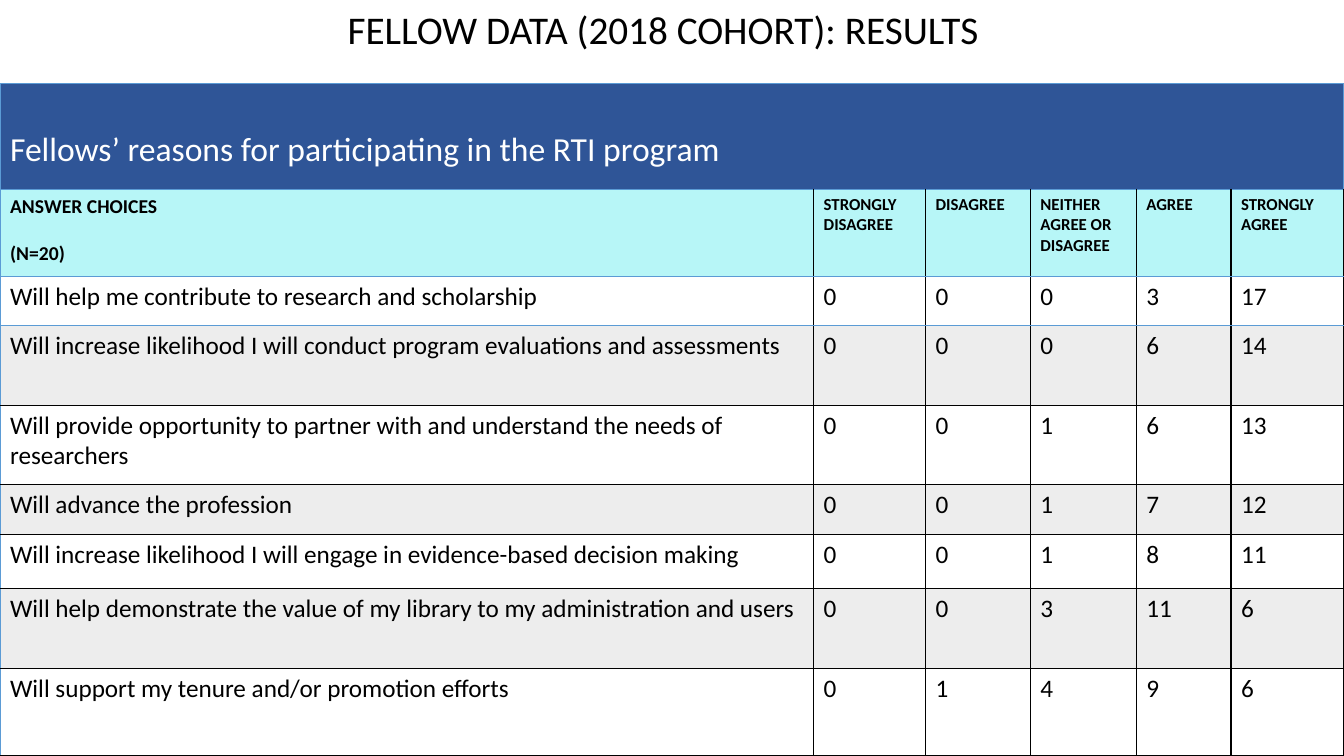
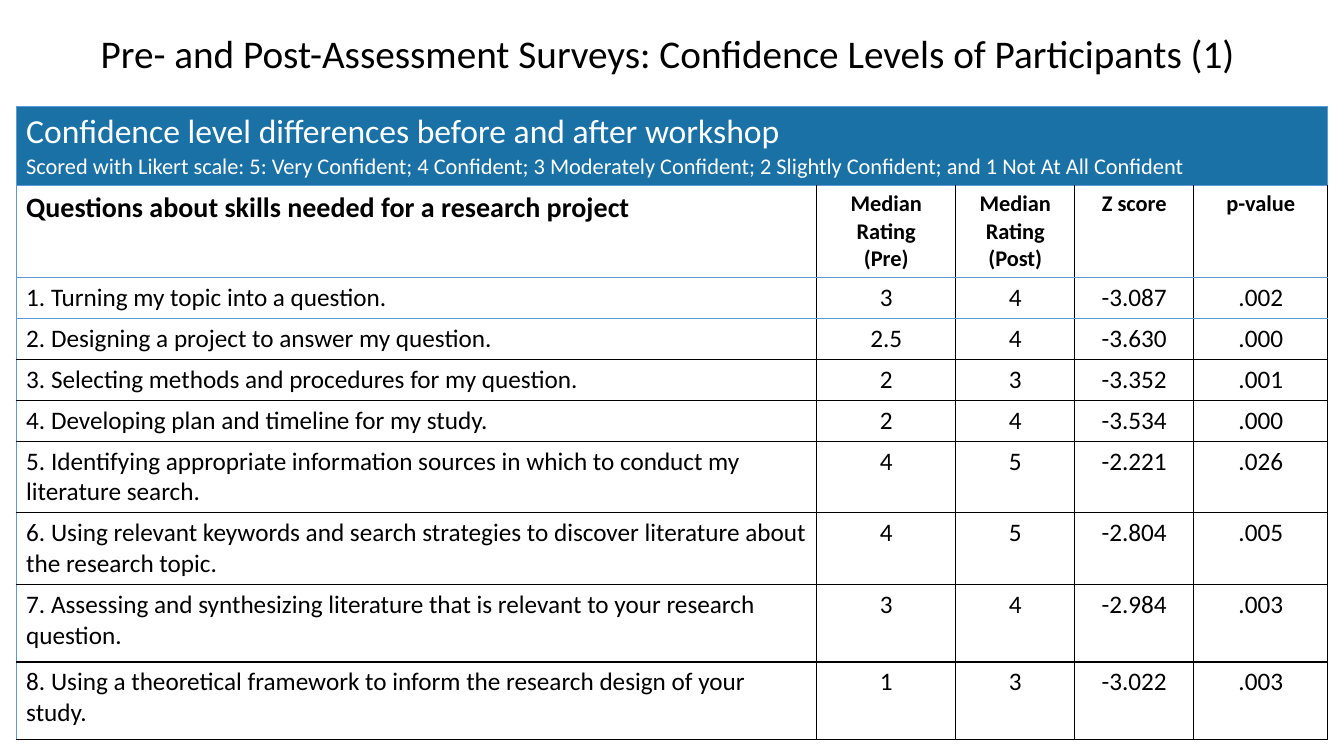
from pptx import Presentation
from pptx.dml.color import RGBColor
from pptx.enum.text import MSO_ANCHOR, MSO_AUTO_SIZE, PP_ALIGN
from pptx.oxml.ns import qn
from pptx.util import Inches, Pt
from lxml import etree

LEFT, CENTER = PP_ALIGN.LEFT, PP_ALIGN.CENTER
TOP, FIXED = MSO_ANCHOR.TOP, MSO_AUTO_SIZE.NONE

THEME = {
    "font": "Calibri",
    "ink": "000000",
    "light": "FFFFFF",
    "edge": "5B9BD5",
    "stripe": "EDEDED",
    "title": 28,
    "body": 18,
    "line": 1,
}
WIDE, HIGH = 13.33, 7.5

# Content: each slide has a title, a band, column heads and rows
SLIDES = [
    {
        "title": "FELLOW DATA (2018 COHORT): RESULTS",
        "box": (-0.19, 0, 13.53, 1.04),
        "at": (0, 0.83, 13.33, 6.67),
        "cols": [8.07, 1.11, 1.04, 1.05, 0.94, 1.12],
        "tall": [1.05, 0.86, 0.49, 0.79, 0.79, 0.49, 0.54, 0.79, 0.87],
        "band": "Fellows’ reasons for participating in the RTI program",
        "band_fill": "2F5597", "band_size": [24], "band_pad": 0.46,
        "heads": ["ANSWER CHOICES\n(N=20)", "STRONGLY DISAGREE", "DISAGREE",
                  "NEITHER AGREE OR DISAGREE", "AGREE", "STRONGLY AGREE"],
        "head_fill": "B7F6F7", "head_size": (14, 12), "head_gap": 17,
        "striped": True, "align": LEFT,
        "rows": [
            ("Will help me contribute to research and scholarship",
             0, 0, 0, 3, 17),
            ("Will increase likelihood I will conduct program evaluations "
             "and assessments", 0, 0, 0, 6, 14),
            ("Will provide opportunity to partner with and understand the "
             "needs of researchers", 0, 0, 1, 6, 13),
            ("Will advance the profession", 0, 0, 1, 7, 12),
            ("Will increase likelihood I will engage in evidence-based "
             "decision making", 0, 0, 1, 8, 11),
            ("Will help demonstrate the value of my library to my "
             "administration and users", 0, 0, 3, 11, 6),
            ("Will support my tenure and/or promotion efforts",
             0, 1, 4, 9, 6),
        ],
    },
    {
        "title": "Pre- and Post-Assessment Surveys: "
                 "Confidence Levels of Participants (1)",
        "box": (0.27, 0.24, 12.7, 0.57),
        "at": (0.16, 1.06, 13.02, 6.21),
        "cols": [7.94, 1.38, 1.18, 1.18, 1.33],
        "tall": [0.74, 0.86] + [0.38] * 4 + [0.67] * 2 + [0.77] * 2,
        "band": "Confidence level differences before and after workshop\n"
                "Scored with Likert scale: 5: Very Confident; 4 Confident; "
                "3 Moderately Confident; 2 Slightly Confident; "
                "and 1 Not At All Confident",
        "band_fill": "1A71A6", "band_size": [24, 16], "band_pad": 0.05,
        "heads": ["Questions about skills needed for a research project",
                  "Median Rating\n(Pre)", "Median Rating\n(Post)",
                  "Z score", "p-value"],
        "head_fill": None, "head_size": (20, 16), "head_gap": 0,
        "striped": False, "align": CENTER,
        "rows": [
            ("1. Turning my topic into a question.",
             "3", "4", "-3.087", ".002"),
            ("2. Designing a project to answer my question.",
             "2.5", "4", "-3.630", ".000"),
            ("3. Selecting methods and procedures for my question.",
             "2", "3", "-3.352", ".001"),
            ("4. Developing plan and timeline for my study.",
             "2", "4", "-3.534", ".000"),
            ("5. Identifying appropriate information sources in which to "
             "conduct my literature search.", "4", "5", "-2.221", ".026"),
            ("6. Using relevant keywords and search strategies to discover "
             "literature about the research topic.",
             "4", "5", "-2.804", ".005"),
            ("7. Assessing and synthesizing literature that is relevant to "
             "your research question.", "3", "4", "-2.984", ".003"),
            ("8. Using a theoretical framework to inform the research "
             "design of your study.", "1", "3", "-3.022", ".003"),
        ],
    },
]


def put(item, **form):
    for name, value in form.items():
        setattr(item, name, value)


def write(frame, text, sizes, color, bold=False, align=LEFT, gap=0):
    """Fill a text frame, one paragraph per line; the last size repeats."""
    for i, line in enumerate(text.split("\n")):
        para = frame.add_paragraph() if i else frame.paragraphs[0]
        put(para, alignment=align, space_before=Pt(gap if i else 0))
        run = para.add_run()
        run.text = line
        put(run.font, name=THEME["font"], bold=bold,
            size=Pt(sizes[min(i, len(sizes) - 1)]))
        run.font.color.rgb = RGBColor.from_string(color)


def rule(cell, r, c):
    """Blue lines round the upper rows and down the left; black elsewhere."""
    blue = {"L": c == 0 or r == 0, "R": r == 0, "T": r <= 3, "B": r <= 2}
    props = cell._tc.get_or_add_tcPr()
    for side, on in blue.items():
        line = etree.SubElement(props, qn("a:ln" + side),
                                w=str(Pt(THEME["line"])))
        fill = etree.SubElement(line, qn("a:solidFill"))
        etree.SubElement(fill, qn("a:srgbClr"),
                         val=THEME["edge" if on else "ink"])


def paint(cell, color):
    if color:
        cell.fill.solid()
        cell.fill.fore_color.rgb = RGBColor.from_string(color)
    else:
        cell.fill.background()


def add_title(slide, data):
    title = slide.shapes.title
    spots = map(Inches, data["box"])
    put(title, **dict(zip(("left", "top", "width", "height"), spots)))
    put(title.text_frame, word_wrap=True, auto_size=FIXED,
        vertical_anchor=TOP)
    write(title.text_frame, data["title"], [THEME["title"]], THEME["ink"],
          align=CENTER)


def add_grid(slide, data):
    cols, tall = data["cols"], data["tall"]
    table = slide.shapes.add_table(len(tall), len(cols),
                                   *map(Inches, data["at"])).table
    put(table, first_row=False, horz_banding=False)
    for col, width in zip(table.columns, cols):
        col.width = Inches(width)
    for row, height in zip(table.rows, tall):
        row.height = Inches(height)

    # Band across the top
    band = table.cell(0, 0)
    for c in range(len(cols)):
        rule(table.cell(0, c), 0, c)
        paint(table.cell(0, c), data["band_fill"])
    band.merge(table.cell(0, len(cols) - 1))
    band.margin_top = Inches(data["band_pad"])
    write(band.text_frame, data["band"], data["band_size"], THEME["light"])

    # Column heads, then the answers
    for r, row in enumerate([data["heads"]] + data["rows"], 1):
        head = r == 1
        shade = THEME["stripe"] if data["striped"] and r % 2 else None
        for c, value in enumerate(row):
            cell = table.cell(r, c)
            rule(cell, r, c)
            paint(cell, data["head_fill"] if head else shade)
            size = data["head_size"][min(c, 1)] if head else THEME["body"]
            write(cell.text_frame, str(value), [size], THEME["ink"], head,
                  data["align"] if c else LEFT, data["head_gap"])


def main():
    deck = Presentation()
    put(deck, slide_width=Inches(WIDE), slide_height=Inches(HIGH))
    for data in SLIDES:
        slide = deck.slides.add_slide(deck.slide_layouts[5])
        add_grid(slide, data)
        add_title(slide, data)
    deck.save("out.pptx")


if __name__ == "__main__":
    main()
